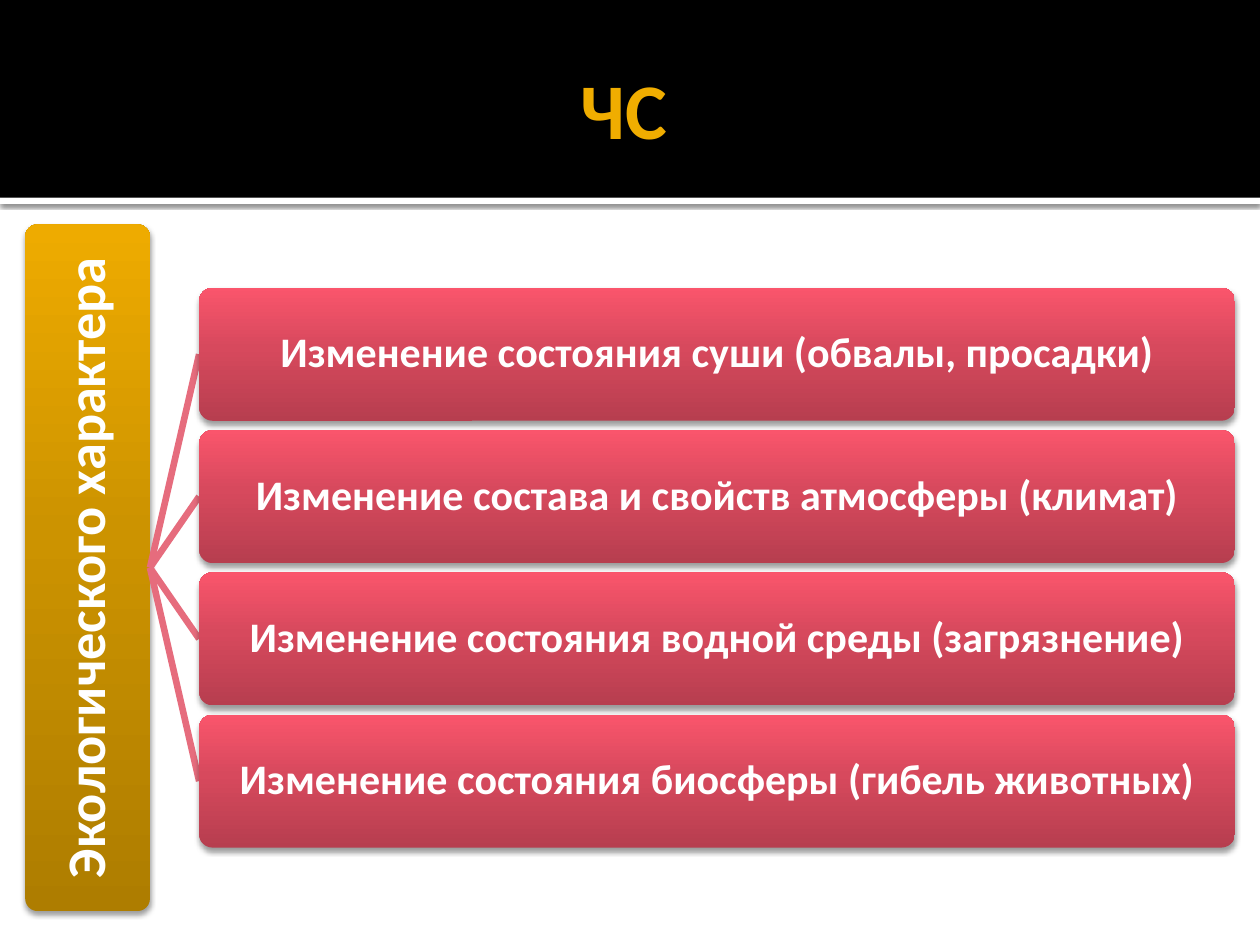
from lxml import etree
from pptx import Presentation
from pptx.dml.color import RGBColor
from pptx.enum.shapes import MSO_CONNECTOR, MSO_SHAPE
from pptx.enum.text import MSO_ANCHOR, PP_ALIGN
from pptx.oxml import parse_xml
from pptx.oxml.ns import nsdecls, qn
from pptx.util import Pt

RECT, ROUNDED = MSO_SHAPE.RECTANGLE, MSO_SHAPE.ROUNDED_RECTANGLE
STRAIGHT = MSO_CONNECTOR.STRAIGHT
MIDDLE, CENTER = MSO_ANCHOR.MIDDLE, PP_ALIGN.CENTER

TITLE = "ЧС "
CATEGORY = "Экологического характера"
CHANGES = [
    "Изменение состояния суши (обвалы, просадки)",
    "Изменение состава и свойств атмосферы (климат)",
    "Изменение состояния водной среды (загрязнение)",
    "Изменение состояния биосферы (гибель животных)",
]

FONT = "Calibri"
COLORS = {"black": "000000", "white": "FFFFFF", "title": "F0AD00", "link": "E66C7D"}
# Gradient stops from bottom to top: position in percent, colour
GOLD = [(0, "AE7D00"), (55, "CC9300"), (100, "EEAB00")]
RED = [(0, "B73E4F"), (55, "D7495D"), (100, "FA556C")]

# Lengths in points
SLIDE_W, SLIDE_H = 720, 540
HEADER_H, STRIPE_H = 113, 3.6
BAR_X, BAR_Y, BAR_W, BAR_H = 14.4, 128.2, 71.3, 392.4
ROW_X, ROW_W, ROW_H, ROW_GAP = 113.8, 591.8, 76, 5.3


def rgb(name):
    return RGBColor.from_string(COLORS[name])


def add_shadow(sp, blur, dist, alpha):
    """Add a black shadow that falls straight down."""
    sp._element.spPr.append(parse_xml(
        f'<a:effectLst {nsdecls("a")}><a:outerShdw blurRad="{Pt(blur)}" '
        f'dist="{Pt(dist)}" dir="5400000" algn="ctr" rotWithShape="0">'
        f'<a:srgbClr val="{COLORS["black"]}"><a:alpha val="{alpha * 1000}"/></a:srgbClr>'
        '</a:outerShdw></a:effectLst>'))


def add_band(shapes, y, h, color):
    sp = shapes.add_shape(RECT, 0, Pt(y), Pt(SLIDE_W), Pt(h))
    sp.fill.solid()
    sp.fill.fore_color.rgb = rgb(color)
    sp.line.fill.background()
    return sp


def write(sp, text, size, color, insets):
    tf = sp.text_frame
    tf.word_wrap = True
    tf.vertical_anchor = MIDDLE
    tf.margin_left, tf.margin_top, tf.margin_right, tf.margin_bottom = map(Pt, insets)
    p = tf.paragraphs[0]
    p.alignment = CENTER
    r = p.add_run()
    r.text = text
    r.font.name, r.font.size, r.font.bold = FONT, Pt(size), True
    r.font.color.rgb = rgb(color)
    return p


def add_card(shapes, x, y, w, h, stops, text, size):
    sp = shapes.add_shape(ROUNDED, Pt(x), Pt(y), Pt(w), Pt(h))
    sp.adjustments[0] = 0.1
    sp.line.fill.background()
    sp.fill.gradient()
    sp.fill.gradient_angle = 90
    stop_list = sp._element.spPr.find(".//" + qn("a:gsLst"))
    for stop in list(stop_list):
        stop_list.remove(stop)
    for pos, color in stops:
        stop = etree.SubElement(stop_list, qn("a:gs"), pos=str(pos * 1000))
        etree.SubElement(stop, qn("a:srgbClr"), val=color)
    add_shadow(sp, 3.1, 2, 38)
    write(sp, text, size, "white", [1.4] * 4).line_spacing = 0.9
    return sp


def add_link(shapes, x1, y1, x2, y2):
    line = shapes.add_connector(STRAIGHT, Pt(x1), Pt(y1), Pt(x2), Pt(y2))
    line.line.color.rgb = rgb("link")
    line.line.width = Pt(3.78)
    etree.SubElement(line._element.spPr, qn("a:effectLst"))


def main():
    prs = Presentation()
    prs.slide_width, prs.slide_height = Pt(SLIDE_W), Pt(SLIDE_H)
    shapes = prs.slides.add_slide(prs.slide_layouts[6]).shapes

    add_shadow(add_band(shapes, HEADER_H, STRIPE_H, "white"), 2.5, 0.8, 60)
    add_band(shapes, 0, HEADER_H, "black").shadow.inherit = False
    title = shapes.add_textbox(Pt(36), Pt(12.2), Pt(648), Pt(98.6))
    write(title, TITLE, 45, "title", (7.2, 3.6, 3.6, 3.6))

    bar = add_card(shapes, BAR_X, BAR_Y, BAR_W, BAR_H, GOLD, CATEGORY, 31)
    bar.text_frame._txBody.bodyPr.set("vert", "vert270")

    middle = BAR_Y + BAR_H / 2
    pitch = ROW_H + ROW_GAP
    first_y = middle - (len(CHANGES) * pitch - ROW_GAP) / 2
    for i, change in enumerate(CHANGES):
        y = first_y + i * pitch
        add_link(shapes, BAR_X + BAR_W, middle, ROW_X, y + ROW_H / 2)
        add_card(shapes, ROW_X, y, ROW_W, ROW_H, RED, change, 24)

    prs.save("out.pptx")


if __name__ == "__main__":
    main()
